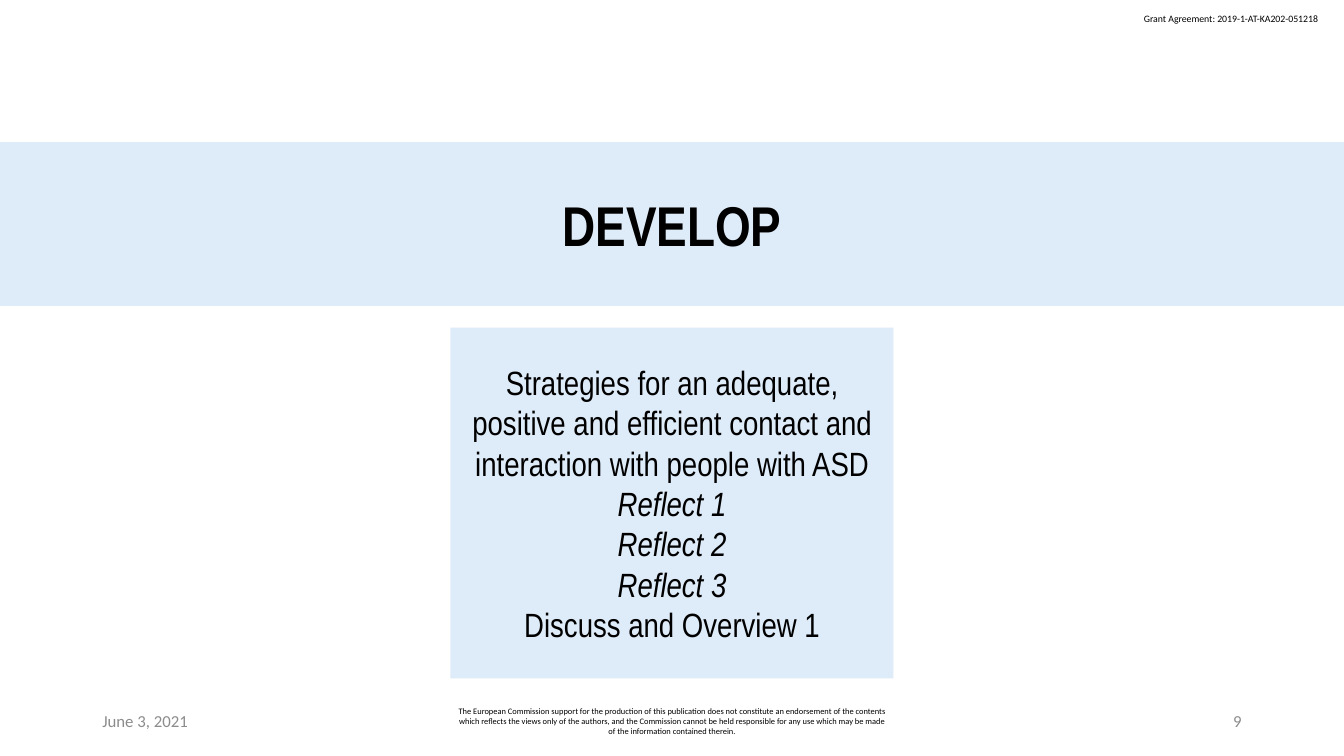
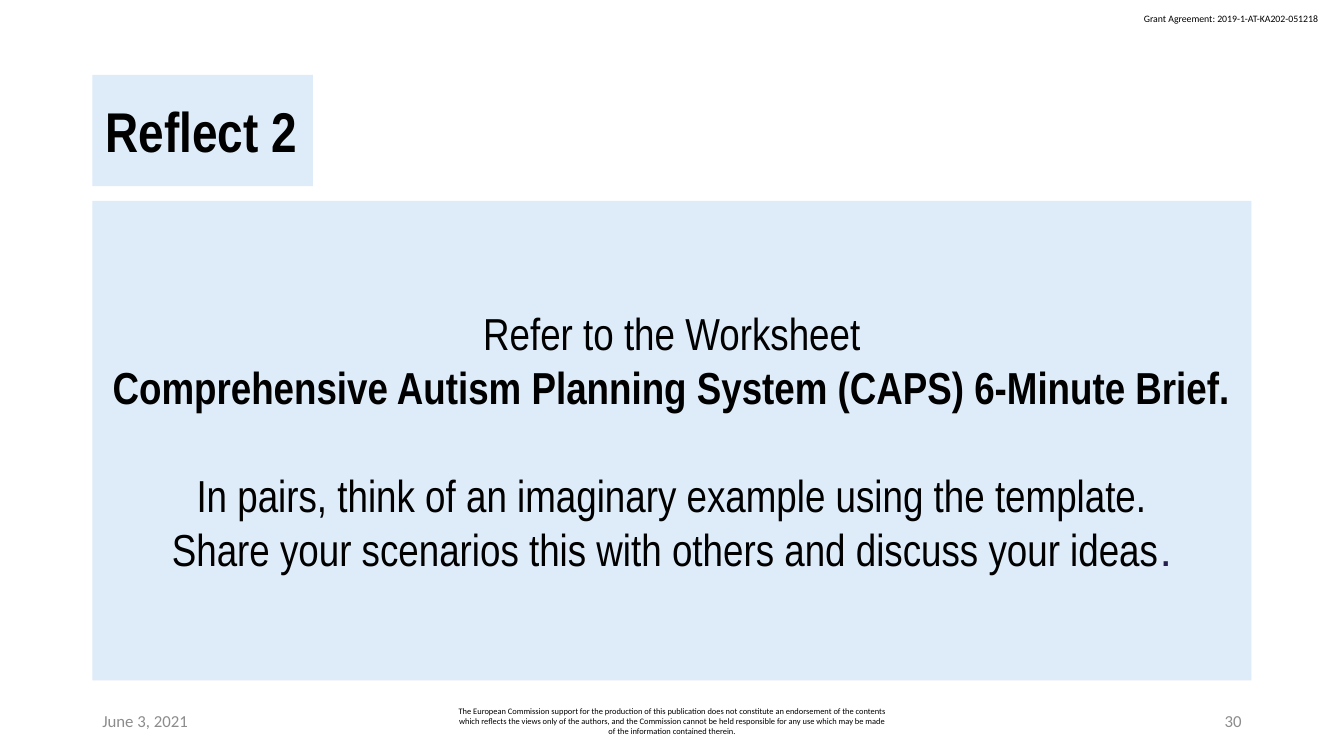
from dataclasses import dataclass

from pptx import Presentation
from pptx.dml.color import RGBColor
from pptx.enum.shapes import MSO_SHAPE
from pptx.enum.text import MSO_ANCHOR, MSO_AUTO_SIZE, PP_ALIGN
from pptx.shapes.autoshape import Shape
from pptx.slide import Slide
from pptx.util import Pt

BLACK = RGBColor(0x00, 0x00, 0x00)
GRAY = RGBColor(0x8C, 0x8C, 0x8C)
NAVY = RGBColor(0x24, 0x1E, 0x4E)
PALE_BLUE = RGBColor(0xDE, 0xEB, 0xF8)

HEADING_FONT = "Arial Narrow"
FOOTER_FONT = "Calibri"
TITLE_SIZE = 40
TITLE_ONLY_LAYOUT = 5
SLIDE_WIDTH = 960
SLIDE_HEIGHT = 540
MARGIN = 66
FOOTER_TOP = 500.5
FOOTER_HEIGHT = 28.75

GRANT = "Grant Agreement: 2019-1-AT-KA202-051218"
DATE = "June 3, 2021"
DISCLAIMER = (
    "The European Commission support for the production of this publication does not "
    "constitute an endorsement of the contents which reflects the views only of the authors, "
    "and the Commission cannot be held responsible for any use which may be made of the "
    "information contained therein."
)


@dataclass(frozen=True)
class Box:
    left: float
    top: float
    width: float
    height: float


@dataclass(frozen=True)
class Line:
    text: str
    size: float
    font: str = HEADING_FONT
    color: RGBColor = BLACK
    bold: bool = False
    italic: bool = False
    align: PP_ALIGN = PP_ALIGN.CENTER
    space_before: float = 0
    ending: str = ""


@dataclass(frozen=True)
class Page:
    number: int
    title: str
    title_box: Box
    title_align: PP_ALIGN
    body_box: Box
    body: tuple[Line, ...]


def write_lines(shape: Shape, lines: tuple[Line, ...], anchor: MSO_ANCHOR = MSO_ANCHOR.MIDDLE) -> None:
    frame = shape.text_frame
    frame.auto_size = MSO_AUTO_SIZE.NONE
    frame.word_wrap = True
    frame.vertical_anchor = anchor
    for index, line in enumerate(lines):
        paragraph = frame.add_paragraph() if index else frame.paragraphs[0]
        paragraph.alignment = line.align
        paragraph.line_spacing = 1.0
        paragraph.space_before = Pt(line.space_before)
        paragraph.font.name = line.font
        paragraph.font.size = Pt(line.size)
        paragraph.font.bold = line.bold
        paragraph.font.italic = line.italic
        paragraph.font.color.rgb = line.color
        paragraph.add_run().text = line.text
        if line.ending:
            run = paragraph.add_run()
            run.text = line.ending
            run.font.name = "Arial"
            run.font.color.rgb = NAVY


def place(shape: Shape, box: Box) -> None:
    shape.left, shape.top = Pt(box.left), Pt(box.top)
    shape.width, shape.height = Pt(box.width), Pt(box.height)


def fill_panel(shape: Shape, lines: tuple[Line, ...]) -> None:
    shape.fill.solid()
    shape.fill.fore_color.rgb = PALE_BLUE
    shape.line.fill.background()
    frame = shape.text_frame
    frame.margin_left = frame.margin_right = Pt(9.4)
    frame.margin_top = frame.margin_bottom = Pt(5)
    write_lines(shape, lines)


def add_text(slide: Slide, box: Box, line: Line, anchor: MSO_ANCHOR = MSO_ANCHOR.MIDDLE) -> Shape:
    shape = slide.shapes.add_textbox(Pt(box.left), Pt(box.top), Pt(box.width), Pt(box.height))
    write_lines(shape, (line,), anchor)
    return shape


def add_header_and_footers(slide: Slide, number: int) -> None:
    grant_line = Line(GRANT, 7, FOOTER_FONT, align=PP_ALIGN.LEFT)
    grant = add_text(slide, Box(810, 5.75, 142, 16), grant_line, MSO_ANCHOR.TOP)
    grant.text_frame.word_wrap = False

    footers = (
        (MARGIN, 216, Line(DATE, 12, FOOTER_FONT, GRAY, align=PP_ALIGN.LEFT)),
        (318, 324, Line(DISCLAIMER, 6, FOOTER_FONT)),
        (678, 216, Line(str(number), 12, FOOTER_FONT, GRAY, align=PP_ALIGN.RIGHT)),
    )
    for left, width, line in footers:
        add_text(slide, Box(left, FOOTER_TOP, width, FOOTER_HEIGHT), line)


def build_page(presentation: Presentation, page: Page) -> None:
    slide = presentation.slides.add_slide(presentation.slide_layouts[TITLE_ONLY_LAYOUT])
    add_header_and_footers(slide, page.number)

    title = slide.shapes.title
    place(title, page.title_box)
    fill_panel(title, (Line(page.title, TITLE_SIZE, bold=True, align=page.title_align),))

    box = page.body_box
    panel = slide.shapes.add_shape(
        MSO_SHAPE.RECTANGLE, Pt(box.left), Pt(box.top), Pt(box.width), Pt(box.height)
    )
    panel.shadow.inherit = False
    fill_panel(panel, page.body)


PAGES = (
    Page(
        number=9,
        title="DEVELOP",
        title_box=Box(0, 101.5, SLIDE_WIDTH, 117),
        title_align=PP_ALIGN.CENTER,
        body_box=Box(321.75, 234, 316.5, 250.5),
        body=(
            Line(
                "Strategies for an adequate, positive and efficient contact "
                "and interaction with people with ASD",
                24,
            ),
            *(Line(f"Reflect {step}", 24, italic=True) for step in range(1, 4)),
            Line("Discuss and Overview 1", 24),
        ),
    ),
    Page(
        number=30,
        title="Reflect 2",
        title_box=Box(MARGIN, 53.5, 157.5, 79.5),
        title_align=PP_ALIGN.LEFT,
        body_box=Box(MARGIN, 143.5, SLIDE_WIDTH - 2 * MARGIN, 342.5),
        body=(
            Line("Refer to the Worksheet", 32),
            Line("Comprehensive Autism Planning System (CAPS) 6-Minute Brief.", 32, bold=True),
            Line(
                "In pairs, think of an imaginary example using the template.",
                32,
                space_before=38.5,
            ),
            Line(
                "Share your scenarios this with others and discuss your ideas",
                32,
                ending=".",
            ),
        ),
    ),
)


def main() -> None:
    presentation = Presentation()
    presentation.slide_width = Pt(SLIDE_WIDTH)
    presentation.slide_height = Pt(SLIDE_HEIGHT)
    for page in PAGES:
        build_page(presentation, page)
    presentation.save("out.pptx")


if __name__ == "__main__":
    main()
